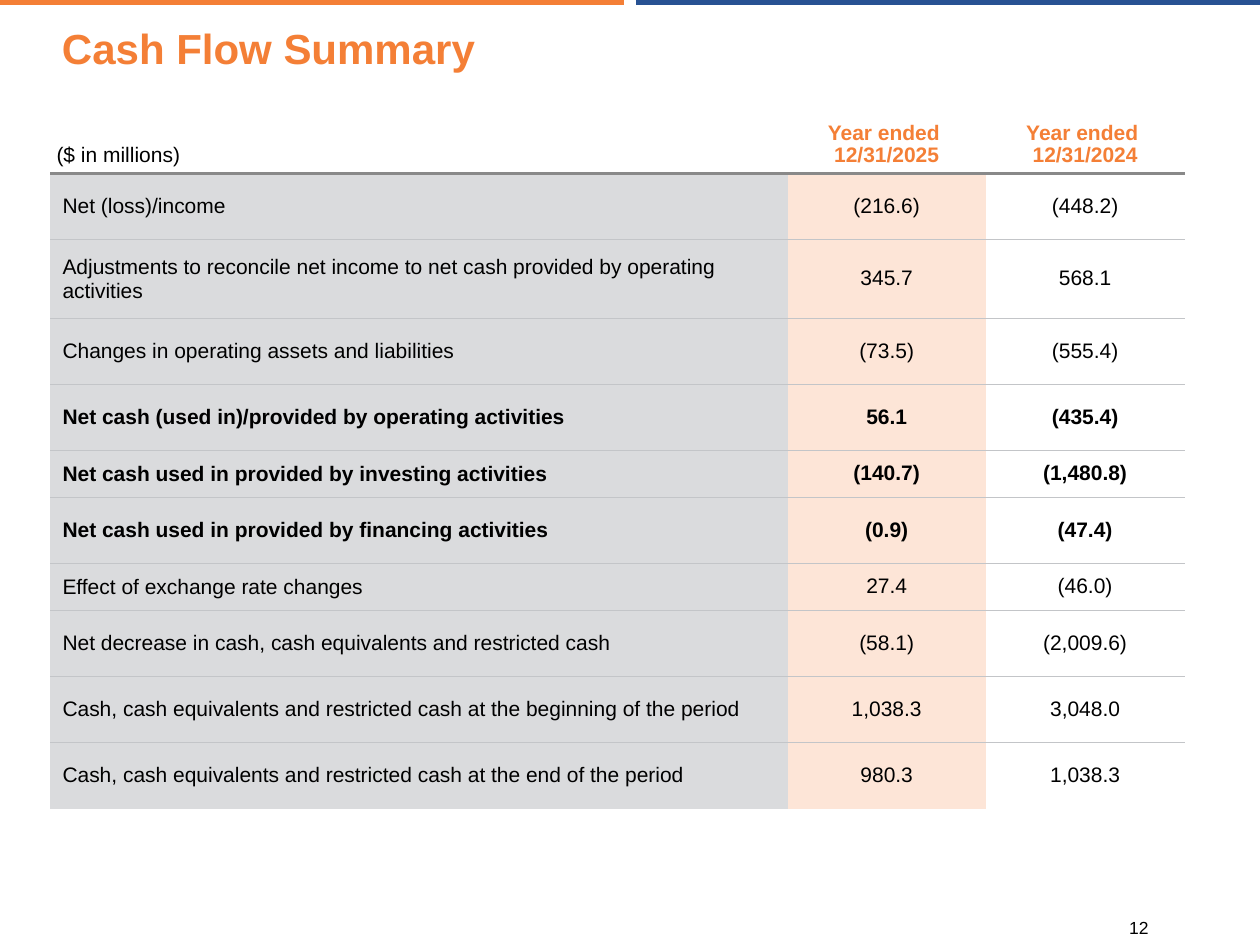
from lxml.etree import SubElement
from pptx import Presentation
from pptx.dml.color import RGBColor
from pptx.enum.shapes import MSO_CONNECTOR as CONN
from pptx.enum.text import MSO_ANCHOR as ANCHOR, PP_ALIGN as ALIGN
from pptx.oxml.ns import qn
from pptx.util import Cm, Pt

ORANGE = RGBColor(0xF4, 0x7F, 0x36)
BLUE = RGBColor(0x28, 0x52, 0x93)
BLACK = RGBColor(0, 0, 0)
LABEL_FILL = RGBColor(0xDA, 0xDB, 0xDD)
CURRENT_FILL = RGBColor(0xFD, 0xE5, 0xD7)
HEADER_RULE = (RGBColor(0x89, 0x89, 0x89), 2.25)
ROW_RULE = (RGBColor(0xC3, 0xC5, 0xC8), 0.5)

# Content: header, then label, 2025, 2024, row height (cm), bold
HEADER = ["($ in millions)", "Year ended \n12/31/2025", "Year ended \n12/31/2024"]
HEADER_H, TALL, MID, LOW = 1.59, 1.59, 1.33, 0.95
ROWS = [
    ("Net (loss)/income", "(216.6)", "(448.2)", MID, False),
    ("Adjustments to reconcile net income to net cash provided by operating activities",
     "345.7", "568.1", TALL, False),
    ("Changes in operating assets and liabilities", "(73.5)", "(555.4)", MID, False),
    ("Net cash (used in)/provided by operating activities", "56.1", "(435.4)", MID, True),
    ("Net cash used in provided by investing activities", "(140.7)", "(1,480.8)", LOW, True),
    ("Net cash used in provided by financing activities", "(0.9)", "(47.4)", MID, True),
    ("Effect of exchange rate changes", "27.4", "(46.0)", LOW, False),
    ("Net decrease in cash, cash equivalents and restricted cash",
     "(58.1)", "(2,009.6)", MID, False),
    ("Cash, cash equivalents and restricted cash at the beginning of the period",
     "1,038.3", "3,048.0", MID, False),
    ("Cash, cash equivalents and restricted cash at the end of the period",
     "980.3", "1,038.3", MID, False),
]
COL_W = [14.87, 3.99, 4.01]
FILLS = [LABEL_FILL, CURRENT_FILL, None]


def write(tf, text, size=12, color=BLACK, bold=False, align=ALIGN.LEFT, spacing=0.95):
    for i, line in enumerate(text.split("\n")):
        p = tf.paragraphs[0] if i == 0 else tf.add_paragraph()
        p.alignment, p.line_spacing = align, spacing
        r = p.add_run()
        r.text = line
        r.font.name, r.font.size, r.font.bold = "Arial", Pt(size), bold
        r.font.color.rgb = color


def add_text(slide, text, left, top, width, height, anchor, inset=0, **fmt):
    tf = slide.shapes.add_textbox(Cm(left), Cm(top), Cm(width), Cm(height)).text_frame
    tf.word_wrap, tf.vertical_anchor = True, anchor
    tf.margin_left = tf.margin_right = 0
    tf.margin_top = tf.margin_bottom = Cm(inset)
    write(tf, text, **fmt)


def set_borders(cell, top, bottom):
    tcPr = cell._tc.get_or_add_tcPr()
    for tag, rule in (("lnL", None), ("lnR", None), ("lnT", top), ("lnB", bottom)):
        ln = SubElement(tcPr, qn(f"a:{tag}"))
        if rule is None:
            SubElement(ln, qn("a:noFill"))
            continue
        color, width = rule
        ln.set("w", str(Pt(width)))
        fill = SubElement(ln, qn("a:solidFill"))
        SubElement(fill, qn("a:srgbClr")).set("val", str(color))


def style_cell(cell, fill, anchor, margins, top, bottom):
    set_borders(cell, top, bottom)
    if fill is None:
        cell.fill.background()
    else:
        cell.fill.solid()
        cell.fill.fore_color.rgb = fill
    cell.vertical_anchor = anchor
    side, edge = margins
    cell.margin_left = cell.margin_right = Cm(side)
    cell.margin_top = cell.margin_bottom = Cm(edge)


prs = Presentation()
prs.slide_width, prs.slide_height = Cm(25.4), Cm(19.05)
slide = prs.slides.add_slide(prs.slide_layouts[6])

# Two-colour band along the top edge
for x1, x2, color in ((0, 12.58, ORANGE), (12.82, 25.4, BLUE)):
    bar = slide.shapes.add_connector(CONN.STRAIGHT, Cm(x1), Cm(0.05), Cm(x2), Cm(0.05))
    bar.line.color.rgb, bar.line.width = color, Pt(3)
    SubElement(bar._element.spPr, qn("a:effectLst"))

# Title
add_text(slide, "Cash Flow Summary", 1.25, 0.53, 22.9, 0.97, ANCHOR.MIDDLE,
         size=24, color=ORANGE, bold=True)

# Cash flow table
heights = [HEADER_H] + [row[3] for row in ROWS]
table = slide.shapes.add_table(len(heights), len(COL_W), Cm(1.01), Cm(1.91),
                               Cm(sum(COL_W)), Cm(sum(heights))).table
table.first_row = table.horz_banding = False
for col, width in zip(table.columns, COL_W):
    col.width = Cm(width)
for row, height in zip(table.rows, heights):
    row.height = Cm(height)

for c, text in enumerate(HEADER):
    cell = table.cell(0, c)
    style_cell(cell, None, ANCHOR.BOTTOM, (0.13, 0.13), None, HEADER_RULE)
    if c == 0:
        write(cell.text_frame, text, spacing=1.0)
    else:
        write(cell.text_frame, text, color=ORANGE, bold=True, align=ALIGN.CENTER)

for n, (*texts, _, bold) in enumerate(ROWS, 1):
    top = HEADER_RULE if n == 1 else ROW_RULE
    bottom = None if n == len(ROWS) else ROW_RULE
    for c, text in enumerate(texts):
        cell = table.cell(n, c)
        style_cell(cell, FILLS[c], ANCHOR.MIDDLE, (0, 0) if c else (0.25, 0.13), top, bottom)
        write(cell.text_frame, text, bold=bold, spacing=0.95 if c else 1.0,
              align=ALIGN.CENTER if c else ALIGN.LEFT)

# Page number
add_text(slide, "12", 20.52, 18.06, 4.88, 0.99, ANCHOR.BOTTOM, inset=0.13,
         size=10, align=ALIGN.CENTER, spacing=1.0)

prs.save("out.pptx")
